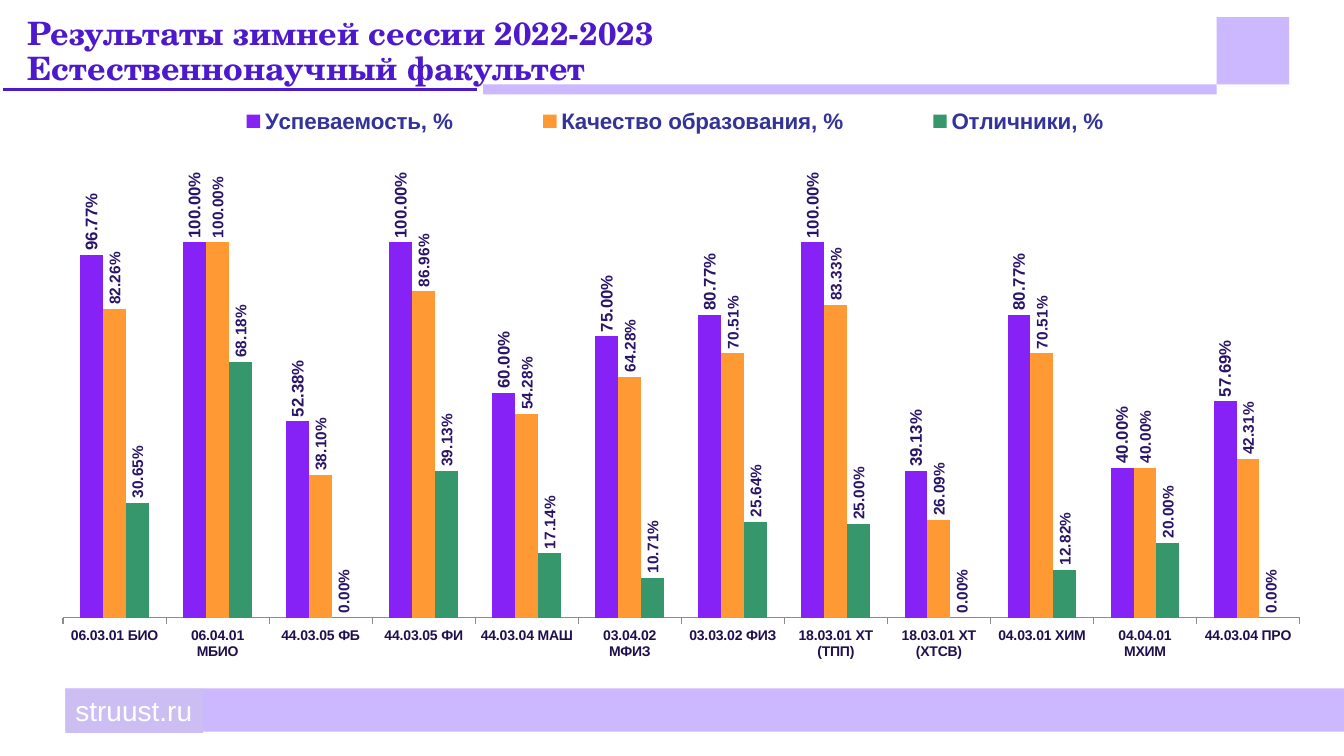
from lxml.etree import SubElement
from pptx import Presentation
from pptx.chart.data import CategoryChartData
from pptx.dml.color import RGBColor
from pptx.enum.chart import XL_CHART_TYPE, XL_LABEL_POSITION, XL_LEGEND_POSITION, XL_TICK_LABEL_POSITION, XL_TICK_MARK
from pptx.enum.shapes import MSO_SHAPE
from pptx.enum.text import MSO_ANCHOR, MSO_AUTO_SIZE, PP_ALIGN
from pptx.oxml.ns import qn
from pptx.util import Cm, Pt

COLORS = {
    "lilac": "CBB8FF", "tag": "CCBEF3", "violet": "4D19CC", "white": "FFFFFF",
    "label": "2A1468", "category": "1F0F4E", "legend": "333399", "axis": "8B8B8B",
}
COLORS = {name: RGBColor.from_string(value) for name, value in COLORS.items()}


def write(tf, text, font, size, color, bold=False, spacing=1.0):
    """Fill a text frame with one left-aligned paragraph; \\v breaks the line."""
    p = tf.paragraphs[0]
    p.text = text
    p.alignment = PP_ALIGN.LEFT
    p.line_spacing = spacing
    for r in p.runs:
        r.font.name = font
        r.font.size = Pt(size)
        r.font.bold = bold
        r.font.color.rgb = COLORS[color]


def place(parent, index, x, y, w, h, inner=False):
    """Set a manual layout, in fractions of the chart area."""
    for old in parent.findall(qn("c:layout")):
        parent.remove(old)
    layout = parent.makeelement(qn("c:layout"))
    parent.insert(index, layout)
    manual = SubElement(layout, qn("c:manualLayout"))
    values = [("xMode", "edge"), ("yMode", "edge"), ("x", x), ("y", y), ("w", w), ("h", h)]
    if inner:
        values.insert(0, ("layoutTarget", "inner"))
    for tag, value in values:
        SubElement(manual, qn(f"c:{tag}")).set("val", str(value))


prs = Presentation()
prs.slide_width, prs.slide_height = Cm(33.87), Cm(19.05)
s = prs.slides.add_slide(prs.slide_layouts[5])

# Bands and corner square
bands = [
    (0, 2.13, 30.66, 0.25, "lilac"),
    (1.65, 17.35, 32.22, 1.09, "lilac"),
    (0, 2.13, 12.09, 0.25, "violet"),
    (30.66, 0.43, 1.83, 1.7, "lilac"),
]
for x, y, w, h, color in bands:
    sp = s.shapes.add_shape(MSO_SHAPE.RECTANGLE, Cm(x), Cm(y), Cm(w), Cm(h))
    sp.shadow.inherit = False
    sp.fill.solid()
    sp.fill.fore_color.rgb = COLORS[color]
    if color == "violet":
        sp.line.color.rgb = COLORS["white"]
        sp.line.width = Pt(4.5)
    else:
        sp.line.fill.background()

# Title, in front of the bands
title = s.shapes.title
title.left, title.top, title.width, title.height = Cm(0.43), Cm(0.33), Cm(19.69), Cm(1.17)
tf = title.text_frame
tf.word_wrap = True
tf.auto_size = MSO_AUTO_SIZE.NONE
tf.vertical_anchor = MSO_ANCHOR.TOP
write(tf, "Результаты зимней сессии 2022-2023\vЕстественнонаучный факультет",
      "TeX Gyre Schola", 23, "violet", bold=True, spacing=0.9)
title.element.getparent().append(title.element)

# Chart
results = [
    ("06.03.01 БИО", 0.9677, 0.8226, 0.3065),
    ("06.04.01 МБИО", 1, 1, 0.6818),
    ("44.03.05 ФБ", 0.5238, 0.381, 0),
    ("44.03.05 ФИ", 1, 0.8696, 0.3913),
    ("44.03.04 МАШ", 0.6, 0.5428, 0.1714),
    ("03.04.02 МФИЗ", 0.75, 0.6428, 0.1071),
    ("03.03.02 ФИЗ", 0.8077, 0.7051, 0.2564),
    ("18.03.01 ХТ (ТПП)", 1, 0.8333, 0.25),
    ("18.03.01 ХТ (ХТСВ)", 0.3913, 0.2609, 0),
    ("04.03.01 ХИМ", 0.8077, 0.7051, 0.1282),
    ("04.04.01 МХИМ", 0.4, 0.4, 0.2),
    ("44.03.04 ПРО", 0.5769, 0.4231, 0),
]
measures = [
    ("Успеваемость, %", "8722F6", 12),
    ("Качество образования, %", "FF9933", 11),
    ("Отличники, %", "35976B", 11),
]
programs, *columns = zip(*results)
data = CategoryChartData(number_format="0.00%")
data.categories = programs
for (name, _, _), values in zip(measures, columns):
    data.add_series(name, values)
chart = s.shapes.add_chart(XL_CHART_TYPE.COLUMN_CLUSTERED, Cm(1.27), Cm(2.62),
                           Cm(31.8), Cm(14.55), data).chart
chart.has_title = False
chart.font.name = "Arial"
chart.font.size = Pt(18)
chart.font.color.rgb = COLORS["label"]

plot = chart.plots[0]
plot.gap_width = 150
plot.overlap = 0
plot.vary_by_categories = False
for series, (_, color, size) in zip(plot.series, measures):
    series.format.fill.solid()
    series.format.fill.fore_color.rgb = RGBColor.from_string(color)
    series.invert_if_negative = False
    labels = series.data_labels
    labels.show_value = True
    labels.position = XL_LABEL_POSITION.OUTSIDE_END
    labels.number_format = "0.00%"
    labels.number_format_is_linked = False
    labels.font.name = "Arial"
    labels.font.size = Pt(size)
    labels.font.bold = True
    labels.font.color.rgb = COLORS["label"]
    body = labels._element.find(f"{qn('c:txPr')}/{qn('a:bodyPr')}")
    body.set("rot", "-5400000")
    body.set("vert", "horz")

axis = chart.category_axis
axis.major_tick_mark = XL_TICK_MARK.OUTSIDE
axis.tick_label_position = XL_TICK_LABEL_POSITION.LOW
axis.format.line.color.rgb = COLORS["axis"]
axis.format.line.width = Pt(0.75)
axis.tick_labels.font.name = "Arial"
axis.tick_labels.font.size = Pt(10)
axis.tick_labels.font.bold = True
axis.tick_labels.font.color.rgb = COLORS["category"]

value_axis = chart.value_axis
value_axis.minimum_scale, value_axis.maximum_scale = 0, 1.2
value_axis.has_major_gridlines = False
value_axis.tick_labels.number_format = "0.00%"
value_axis.tick_labels.number_format_is_linked = False
value_axis.visible = False

chart.has_legend = True
legend = chart.legend
legend.position = XL_LEGEND_POSITION.TOP
legend.include_in_layout = False
legend.font.name = "Arial"
legend.font.size = Pt(16)
legend.font.bold = True
legend.font.color.rgb = COLORS["legend"]
place(legend._element, 1, 0.09, 0, 0.81, 0.06)
place(plot._element.getparent(), 0, 0.01, 0.11, 0.98, 0.78, inner=True)

# Site address
tag = s.shapes.add_textbox(Cm(1.65), Cm(17.36), Cm(3.48), Cm(1.11))
tag.fill.solid()
tag.fill.fore_color.rgb = COLORS["tag"]
tag.text_frame.word_wrap = False
tag.text_frame.auto_size = MSO_AUTO_SIZE.SHAPE_TO_FIT_TEXT
write(tag.text_frame, "struust.ru", "Arial", 20, "white")

prs.save("out.pptx")
